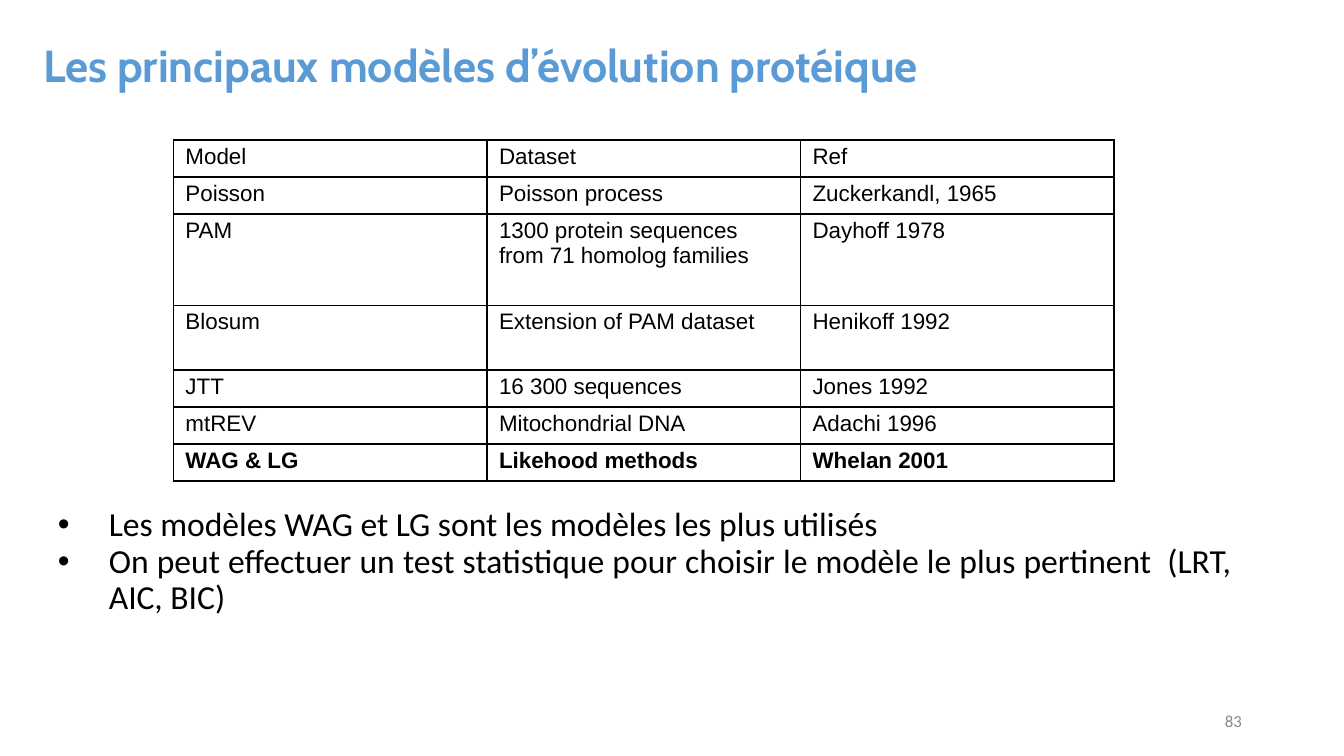
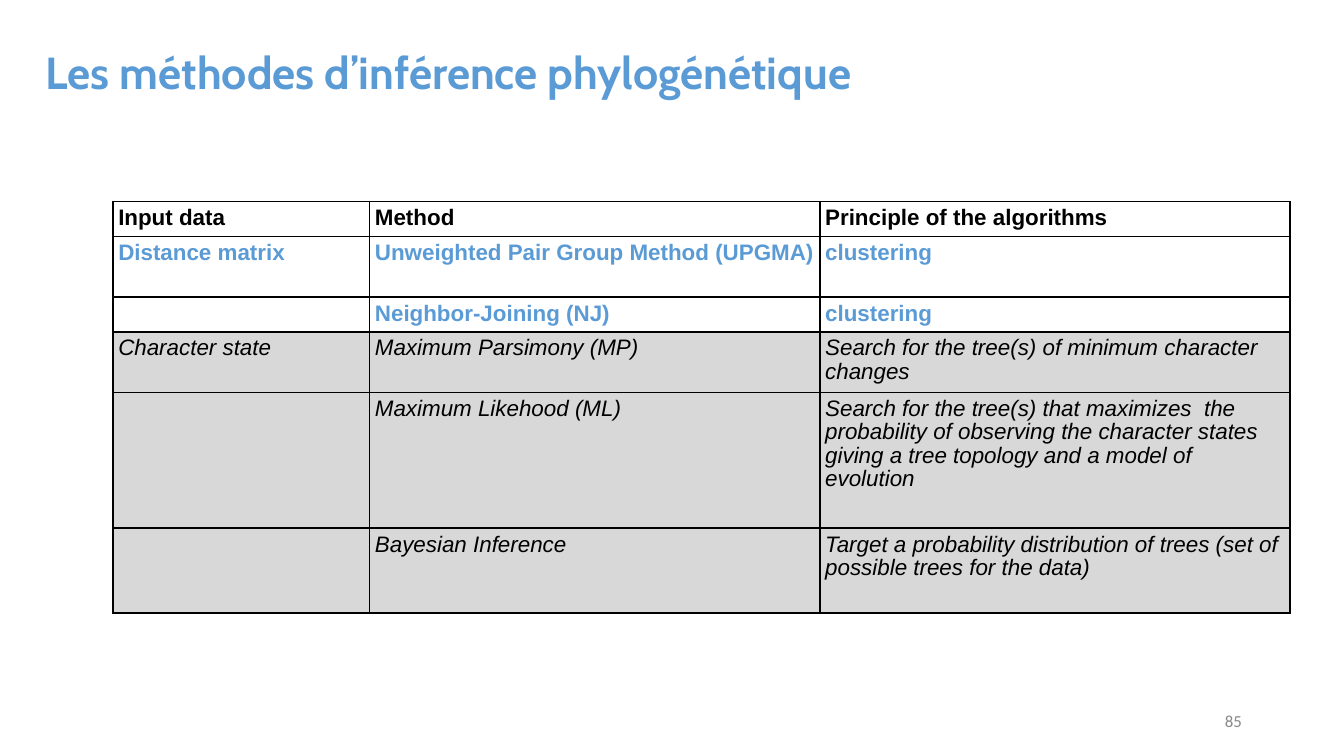
from lxml.etree import SubElement
from pptx import Presentation
from pptx.dml.color import RGBColor
from pptx.enum.text import MSO_ANCHOR, MSO_AUTO_SIZE, PP_ALIGN
from pptx.oxml.ns import qn
from pptx.util import Inches, Pt

COLORS = {
    "text": "000000",
    "accent": "5B9BD5",
    "number": "888888",
    "border": "000000",
    "plain": "FFFFFF",
    "shaded": "D8D8D8",
}
TITLE_ONLY = 5
SLIDE_WIDTH = 10
SLIDE_HEIGHT = SLIDE_WIDTH * 9 / 16
MODEL_LINE = (2.54 - 0.68 - 0.48) / 5

MODEL_ROWS = [
    ("Model", "Dataset", "Ref"),
    ("Poisson", "Poisson process", "Zuckerkandl, 1965"),
    ("PAM", "1300 protein sequences from 71 homolog families", "Dayhoff 1978"),
    ("Blosum", "Extension of PAM dataset", "Henikoff 1992"),
    ("JTT", "16 300 sequences", "Jones 1992"),
    ("mtREV", "Mitochondrial DNA", "Adachi 1996"),
    ("WAG & LG", "Likehood methods", "Whelan 2001"),
]
METHOD_ROWS = [
    ("Input data", "Method", "Principle of the algorithms"),
    ("Distance matrix", "Unweighted Pair Group Method (UPGMA)", "clustering"),
    ("", "Neighbor-Joining (NJ)", "clustering"),
    ("Character state", "Maximum Parsimony (MP)",
     "Search for the tree(s) of minimum character changes"),
    ("", "Maximum Likehood (ML)",
     "Search for the tree(s) that maximizes  the probability of observing the "
     "character states giving a tree topology and a model of evolution"),
    ("", "Bayesian Inference",
     "Target a probability distribution of trees (set of possible trees for the data)"),
]
ADVICE = [
    "Les modèles WAG et LG sont les modèles les plus utilisés",
    "On peut effectuer un test statistique pour choisir le modèle le plus pertinent  "
    "(LRT, AIC, BIC)",
]


def write_paragraph(paragraph, text, *, size, font="Arial", color="text", bold=False,
                    italic=False, align=PP_ALIGN.LEFT, spacing=1.0, indent=None, bullet=None):
    """Write one formatted paragraph; indent is (left margin, first line) in inches."""
    paragraph.alignment = align
    paragraph.line_spacing = spacing
    paragraph.space_before = Pt(0)
    properties = paragraph._p.get_or_add_pPr()
    if indent:
        margin, first_line = indent
        properties.set("marL", str(Inches(margin)))
        properties.set("indent", str(Inches(first_line)))
    if bullet:
        SubElement(properties, qn("a:buFont")).set("typeface", "Arial")
        SubElement(properties, qn("a:buChar")).set("char", bullet)
    if not text:
        # A smaller size keeps an empty cell from stretching its row.
        paragraph._p.get_or_add_endParaRPr().set("sz", "1000")
        return
    run = paragraph.add_run()
    run.text = text
    run.font.name = font
    run.font.size = Pt(size)
    run.font.bold = bold
    run.font.italic = italic
    run.font.color.rgb = RGBColor.from_string(COLORS[color])


def set_margins(target, margins):
    left, top, right, bottom = (Inches(margin) for margin in margins)
    target.margin_left, target.margin_top = left, top
    target.margin_right, target.margin_bottom = right, bottom


def fill_frame(shape, texts, margins, anchor, **text_format):
    frame = shape.text_frame
    frame.word_wrap = True
    frame.auto_size = MSO_AUTO_SIZE.NONE
    frame.vertical_anchor = anchor
    set_margins(frame, margins)
    for index, text in enumerate(texts):
        paragraph = frame.add_paragraph() if index else frame.paragraphs[0]
        write_paragraph(paragraph, text, **text_format)


def add_text(slide, box, texts, margins, anchor, **text_format):
    shape = slide.shapes.add_textbox(*(Inches(length) for length in box))
    fill_frame(shape, texts, margins, anchor, **text_format)


def add_titled_slide(presentation, title, title_box, number, **title_format):
    slide = presentation.slides.add_slide(presentation.slide_layouts[TITLE_ONLY])
    shape = slide.shapes.title
    shape.left, shape.top, shape.width, shape.height = (Inches(length) for length in title_box)
    fill_frame(shape, [title], (0.07, 0.01, 0.07, 0.04), MSO_ANCHOR.MIDDLE,
               size=24, font="Cabin", color="accent", bold=True, **title_format)
    add_text(slide, (7.06, 5.21, 2.25, 0.3), [number], (0.07, 0.04, 0.07, 0.04),
             MSO_ANCHOR.MIDDLE, size=9, font="Calibri", color="number", align=PP_ALIGN.RIGHT)
    return slide


def add_borders(cell):
    properties = cell._tc.get_or_add_tcPr()
    for side in ("lnL", "lnR", "lnT", "lnB"):
        line = SubElement(properties, qn(f"a:{side}"), w=str(Pt(1)))
        fill = SubElement(line, qn("a:solidFill"))
        SubElement(fill, qn("a:srgbClr"), val=COLORS["border"])


def add_grid(slide, left, top, widths, heights, rows, margins, row_style, spacing=1.0):
    """Add a bordered table; row_style(index) gives the fill name and text format of a row."""
    table = slide.shapes.add_table(
        len(rows), len(widths), Inches(left), Inches(top),
        Inches(sum(widths)), Inches(sum(heights))).table
    table.first_row = False
    table.horz_banding = False
    for column, width in zip(table.columns, widths):
        column.width = Inches(width)
    for index, (row, height, texts) in enumerate(zip(table.rows, heights, rows)):
        row.height = Inches(height)
        fill, text_format = row_style(index)
        for cell, text in zip(row.cells, texts):
            add_borders(cell)
            cell.fill.solid()
            cell.fill.fore_color.rgb = RGBColor.from_string(COLORS[fill])
            set_margins(cell, margins)
            write_paragraph(cell.text_frame.paragraphs[0], text, size=12,
                            spacing=spacing, **text_format)


def model_row_style(index):
    return "plain", {"bold": index == len(MODEL_ROWS) - 1}


def method_row_style(index):
    if index == 0:
        return "plain", {"bold": True}
    if index <= 2:
        return "plain", {"bold": True, "color": "accent"}
    return "shaded", {"italic": True}


def add_models_slide(presentation):
    slide = add_titled_slide(presentation, "Les principaux modèles d’évolution protéique",
                             (0.25, 0.11, 8.96, 0.81), "83", spacing=0.97)
    add_text(slide, (0.24, 3.76, 9, 1.14), ADVICE, (0.07, 0.02, 0.07, 0.04), MSO_ANCHOR.TOP,
             size=18, font="Calibri", align=PP_ALIGN.JUSTIFY, spacing=0.9,
             indent=(0.5, -0.38), bullet="•")
    heights = [MODEL_LINE] * 2 + [0.68, 0.48] + [MODEL_LINE] * 3
    add_grid(slide, 1.29, 1.04, [7 / 3] * 3, heights,
             MODEL_ROWS, (0.09, 0.03, 0.09, 0.03), model_row_style)


def add_methods_slide(presentation):
    slide = add_titled_slide(presentation, "Les méthodes d’inférence phylogénétique",
                             (0.19, 0.18, 7.75, 0.79), "85", spacing=0.9,
                             indent=(0.36, -0.28))
    add_grid(slide, 0.84, 1.5, [1.91, 3.35, 3.5], [0.26, 0.45, 0.26, 0.45, 1.01, 0.63],
             METHOD_ROWS, (0.04, 0.04, 0.04, 0.03), method_row_style, spacing=0.93)


def main():
    presentation = Presentation()
    presentation.slide_width = Inches(SLIDE_WIDTH)
    presentation.slide_height = Inches(SLIDE_HEIGHT)
    add_models_slide(presentation)
    add_methods_slide(presentation)
    presentation.save("out.pptx")


if __name__ == "__main__":
    main()
